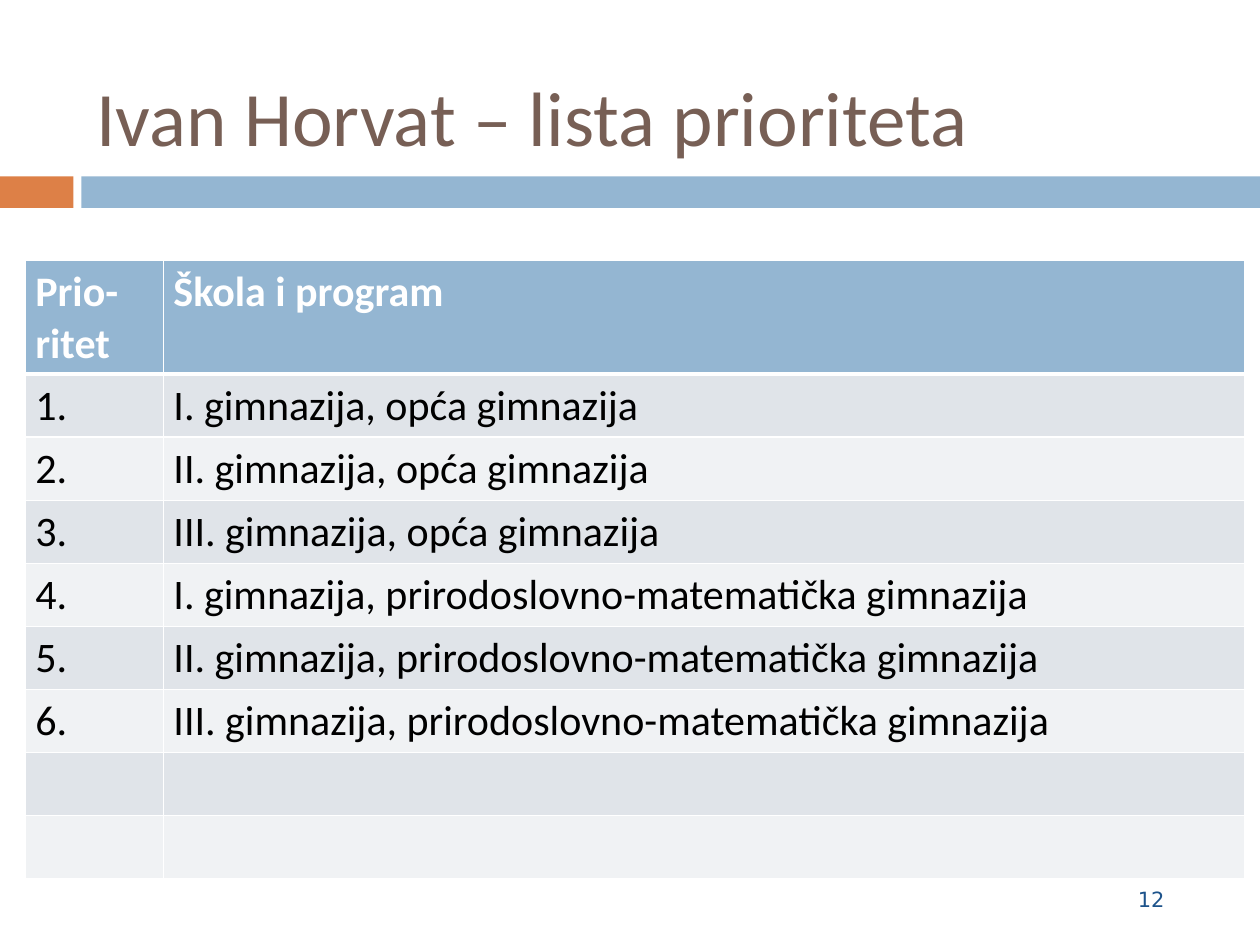
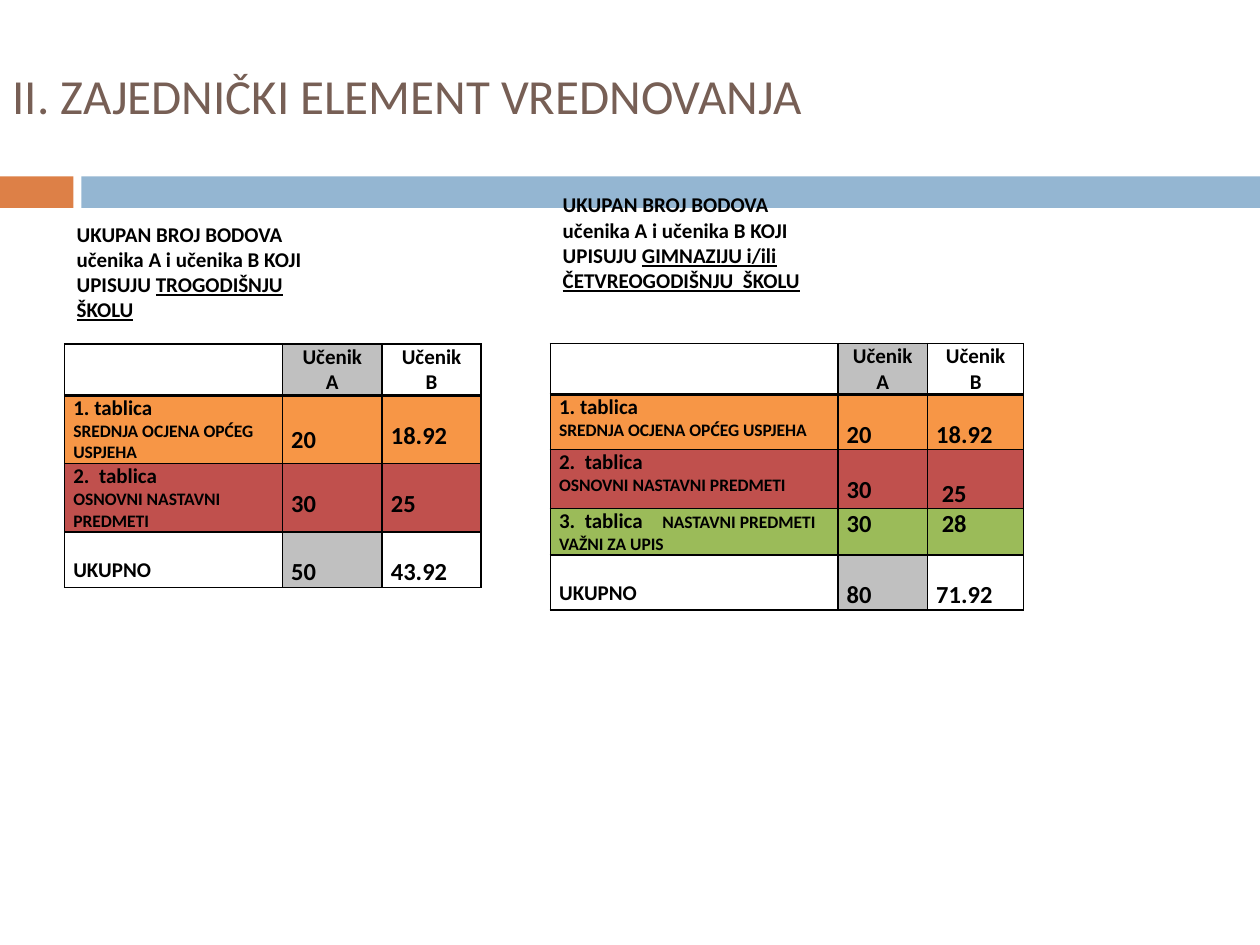
from lxml.etree import SubElement
from pptx import Presentation
from pptx.dml.color import RGBColor
from pptx.enum.shapes import MSO_SHAPE
from pptx.enum.text import MSO_ANCHOR, MSO_AUTO_SIZE, PP_ALIGN
from pptx.oxml.ns import qn
from pptx.util import Pt

ORANGE = RGBColor(0xDD, 0x80, 0x47)
BLUE = RGBColor(0x94, 0xB6, 0xD2)
BROWN = RGBColor(0x77, 0x5F, 0x55)
NAVY = RGBColor(0x1D, 0x53, 0x8B)
WHITE = RGBColor(0xFF, 0xFF, 0xFF)
BLACK = RGBColor(0x00, 0x00, 0x00)
DARK = RGBColor(0xE0, 0xE4, 0xE9)
LIGHT = RGBColor(0xF0, 0xF2, 0xF4)
GREY = RGBColor(0xC0, 0xC0, 0xC0)
AMBER = RGBColor(0xF7, 0x96, 0x46)
RED = RGBColor(0xC0, 0x50, 0x4D)
GREEN = RGBColor(0x9B, 0xBB, 0x59)

SCHOOLS = [f"{school}. gimnazija, {course} gimnazija"
           for course in ("opća", "prirodoslovno-matematička")
           for school in ("I", "II", "III")]

HEAD = "UKUPAN BROJ BODOVA učenika A i učenika B KOJI UPISUJU "
MEAN = [(12, "1. tablica"), (10, "SREDNJA OCJENA OPĆEG USPJEHA")]
BASE = [(12, "2.  tablica"), (10, "OSNOVNI NASTAVNI PREDMETI")]
EXTRA = [(12, "3.  tablica\t", ("NASTAVNI PREDMETI VAŽNI ZA UPIS", "size", Pt(10)))]
LINE = 14.65
TALL = 17.1
SHIFT = 3.2
TAB = 59


class Deck:
    font = "Calibri"

    def __init__(self):
        self.show = Presentation()
        self.show.slide_width, self.show.slide_height = Pt(720), Pt(540)

    def start(self, text, box, size, anchor):
        self.slide = self.show.slides.add_slide(self.show.slide_layouts[5])
        title = self.slide.shapes.title
        title.left, title.top, title.width, title.height = map(Pt, box)
        frame = title.text_frame
        frame.auto_size = MSO_AUTO_SIZE.NONE
        frame.vertical_anchor = anchor
        self.fill(frame, [(size, text)], BROWN)
        self.band(0, 42, ORANGE)
        self.band(46.5, 673.5, BLUE)

    def band(self, left, width, color):
        bar = self.slide.shapes.add_shape(
            MSO_SHAPE.RECTANGLE, Pt(left), Pt(100.8), Pt(width), Pt(18))
        bar.shadow.inherit = False
        bar.fill.solid()
        bar.fill.fore_color.rgb = color
        bar.line.fill.background()

    def fill(self, frame, paras, color=BLACK, bold=False, align=PP_ALIGN.LEFT, font=None):
        for index, (size, *runs) in enumerate(paras):
            para = frame.add_paragraph() if index else frame.paragraphs[0]
            para.alignment = align
            para.font.name = font or self.font
            para.font.size = Pt(size)
            para.font.bold = bold
            para.font.color.rgb = color
            for item in runs:
                text, *style = (item,) if isinstance(item, str) else item
                run = para.add_run()
                run.text = text
                if style:
                    self.accent(run.font, *style)

    def accent(self, font, kind, value):
        if kind == "size":
            font.size = value
        else:
            font.underline = value

    def text(self, box, paras, low=3.6, anchor=MSO_ANCHOR.TOP, **style):
        frame = self.slide.shapes.add_textbox(*map(Pt, box)).text_frame
        frame.word_wrap = True
        frame.vertical_anchor = anchor
        frame.margin_bottom = Pt(low)
        self.fill(frame, paras, **style)

    def grid(self, left, top, cols, rows):
        shape = self.slide.shapes.add_table(
            len(rows), len(cols), Pt(left), Pt(top), Pt(sum(cols)), Pt(sum(rows)))
        table = shape.table
        table.first_row = table.horz_banding = False
        for col, width in zip(table.columns, cols):
            col.width = Pt(width)
        for row, height in zip(table.rows, rows):
            row.height = Pt(height)
        return table

    def cell(self, cell, paras, shade, pads, edge, widths, **style):
        (cell.margin_left, cell.margin_top,
         cell.margin_right, cell.margin_bottom) = map(Pt, pads)
        self.fill(cell.text_frame, paras, **style)
        props = cell._tc.get_or_add_tcPr()
        for side, width in zip("LRTB", widths):
            line = SubElement(props, qn(f"a:ln{side}"), w=str(Pt(width)))
            paint = SubElement(line, qn("a:solidFill"))
            SubElement(paint, qn("a:srgbClr"), val=str(edge))
        if shade is None:
            cell.fill.background()
        else:
            cell.fill.solid()
            cell.fill.fore_color.rgb = shade

    def ranks(self, left, top, cols, names, blanks):
        rows = [("Prio-ritet", "Škola i program")]
        rows += [(f"{rank}.", name) for rank, name in enumerate(names, 1)]
        rows += [("", "")] * blanks
        table = self.grid(left, top, cols, [64.3] + [36] * (len(rows) - 1))
        for r, row in enumerate(rows):
            shade = (DARK if r % 2 else LIGHT) if r else BLUE
            widths = (1, 1, 3 if r == 1 else 1, 1 if r else 3)
            for c, text in enumerate(row):
                paras = [(24, text)] if text else []
                self.cell(table.cell(r, c), paras, shade, (5.76, 3.6, 5.76, 3.6), WHITE,
                          widths, color=BLACK if r else WHITE, bold=not r)

    def scores(self, left, top, cols, rows):
        table = self.grid(left, top, cols, [row[0] for row in rows])
        for r, (height, color, *cells) in enumerate(rows):
            widths = (1, 1, 2.25 if r == 1 else 1, 1 if r else 2.25)
            for c, (paras, lead, shift) in enumerate(cells):
                shade = color or (GREY if c == 1 else None)
                self.cell(table.cell(r, c), paras, shade, (5 + shift, lead, 5, 0), BLACK,
                          widths, bold=True,
                          align=PP_ALIGN.LEFT if r else PP_ALIGN.CENTER)
                for para in table.cell(r, c).text_frame.paragraphs:
                    if "\t" in para.text:
                        self.stop(para)

    def stop(self, para):
        props = para._p.get_or_add_pPr()
        tabs = props.makeelement(qn("a:tabLst"), {})
        SubElement(tabs, qn("a:tab"), pos=str(Pt(TAB)), algn="l")
        props.insert(0, tabs)


def pupil(name):
    return [(12, "Učenik"), (12, name)], 0, 0


def label(paras, lead=0):
    return paras, lead, 0


def mark(value, lead=LINE, shift=0):
    return [(14, value)], lead, shift


def total(height, first, second):
    return height, None, label([(12, "UKUPNO")], LINE), mark(first), mark(second)


def main():
    deck = Deck()
    deck.start("Ivan Horvat – lista prioriteta", (48, 18, 642, 78), 44, MSO_ANCHOR.BOTTOM)
    deck.text((516, 503, 156.5, 28), [(12, "12")], color=NAVY,
              align=PP_ALIGN.RIGHT, font="DejaVu Sans")
    deck.ranks(14.4, 149, (79, 618), SCHOOLS, 2)

    deck.start("II. ZAJEDNIČKI ELEMENT VREDNOVANJA", (0, 12, 654, 84), 28, MSO_ANCHOR.MIDDLE)
    top = (29, None, label([]), pupil("A"), pupil("B"))
    deck.scores(36.9, 196.7, (124.5, 57, 56.5), [
        top,
        (39, AMBER, label(MEAN), mark("20", TALL), mark("18.92")),
        (39, RED, label(BASE), mark("30"), mark("25")),
        total(31.5, "50", "43.92")])
    deck.text((36.7, 122.4, 167, 65.5), [(12, HEAD, ("TROGODIŠNJU ŠKOLU", "underline", True))],
              anchor=MSO_ANCHOR.MIDDLE, bold=True)

    deck.scores(314.5, 196.3, (164.3, 51.2, 55), [
        top,
        (31, AMBER, label(MEAN), mark("20"), mark("18.92")),
        (33.7, RED, label(BASE), mark("30"), mark("25", TALL, SHIFT)),
        (26.3, GREEN, label(EXTRA), mark("30", 0), mark("28", 0, SHIFT)),
        total(31.5, "80", "71.92")])
    deck.text((314.5, 106, 161.3, 87),
              [(12, HEAD, ("GIMNAZIJU i/ili ČETVREOGODIŠNJU  ŠKOLU", "underline", True))],
              low=25.6, anchor=MSO_ANCHOR.MIDDLE, bold=True)
    deck.show.save("out.pptx")


if __name__ == "__main__":
    main()
